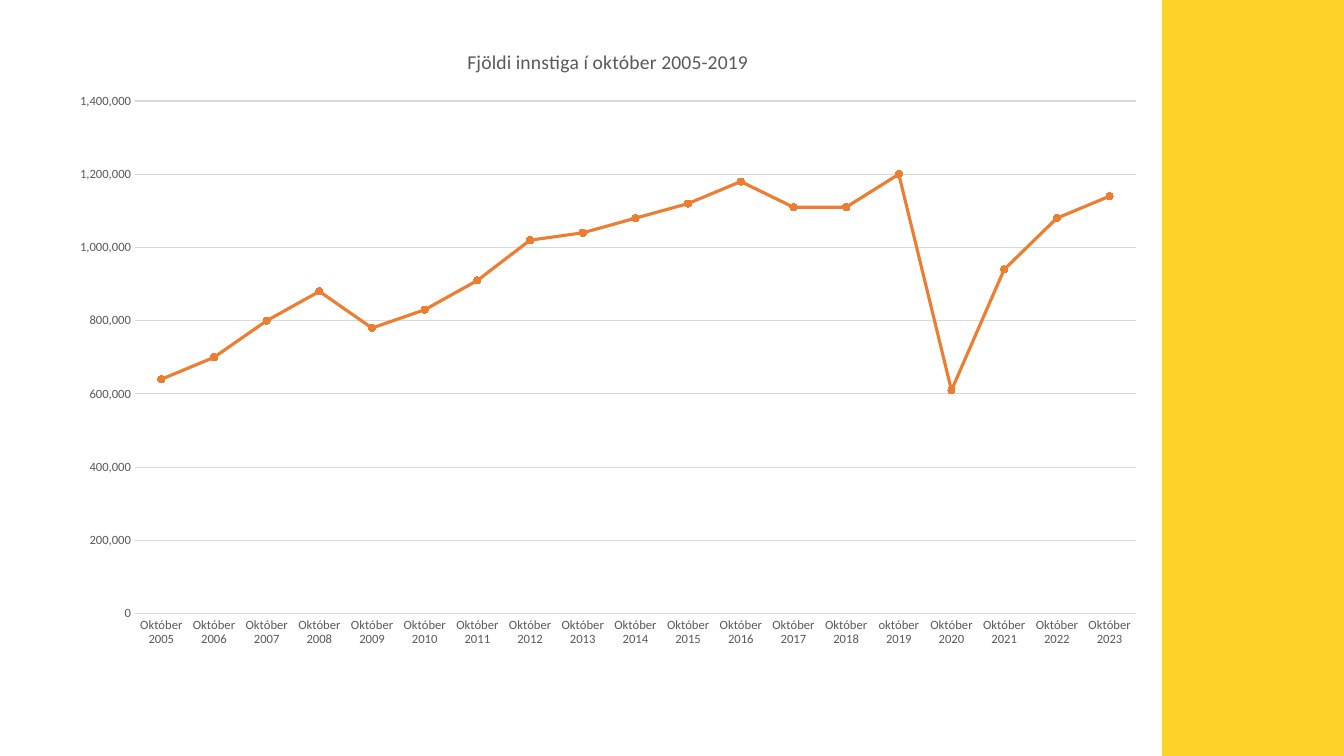
import pptx
import pptx.util
import pptx.chart.data
import pptx.dml.color
import pptx.enum.chart
import pptx.enum.shapes
import pptx.oxml

PX = 914400 / 100.8
COLORS = {"band": "FFD228", "series": "ED7D31", "text": "595959", "grid": "D9D9D9"}
FONT = "Calibri"
TITLE = "Fjöldi innstiga í október 2005-2019"
ENTRIES = {
    "Október 2005": 640000, "Október 2006": 700000, "Október 2007": 800000,
    "Október 2008": 880000, "Október 2009": 780000, "Október 2010": 830000,
    "Október 2011": 910000, "Október 2012": 1020000, "Október 2013": 1040000,
    "Október 2014": 1080000, "Október 2015": 1120000, "Október 2016": 1180000,
    "Október 2017": 1110000, "Október 2018": 1110000, "október 2019": 1200000,
    "Október 2020": 610000, "Október 2021": 940000, "Október 2022": 1080000,
    "Október 2023": 1140000,
}


def px(n):
    return pptx.util.Emu(round(n * PX))


def rgb(name):
    return pptx.dml.color.RGBColor.from_string(COLORS[name])


def set_attrs(obj, values):
    for name, value in values.items():
        setattr(obj, name, value)


def style_font(font, size):
    set_attrs(font, {"name": FONT, "size": pptx.util.Pt(size), "bold": False})
    font.color.rgb = rgb("text")


def style_line(line, color, width):
    line.color.rgb = rgb(color)
    line.width = pptx.util.Pt(width)


def side_band(s, x, y, w, h):
    band = s.shapes.add_shape(
        pptx.enum.shapes.MSO_SHAPE.RECTANGLE, px(x), px(y), px(w), px(h))
    band.shadow.inherit = False
    band.fill.solid()
    band.fill.fore_color.rgb = rgb("band")
    band.line.fill.background()


def place_plot(chart, x, y, w, h):
    plot_area = chart._chartSpace.chart.plotArea
    for old in plot_area.xpath("c:layout"):
        plot_area.remove(old)
    ns = "http://schemas.openxmlformats.org/drawingml/2006/chart"
    places = "".join(f'<c:{k} val="{v:.3f}"/>'
                     for k, v in zip("xywh", (x, y, w, h)))
    layout = pptx.oxml.parse_xml(
        f'<c:layout xmlns:c="{ns}"><c:manualLayout><c:layoutTarget val="inner"/>'
        f'<c:xMode val="edge"/><c:yMode val="edge"/>{places}'
        '</c:manualLayout></c:layout>')
    plot_area.insert(0, layout)


def boarding_chart(s, x, y, w, h):
    data = pptx.chart.data.CategoryChartData(number_format="#,##0")
    data.categories = list(ENTRIES)
    data.add_series("Series 1", list(ENTRIES.values()))
    chart = s.shapes.add_chart(
        pptx.enum.chart.XL_CHART_TYPE.LINE_MARKERS,
        px(x), px(y), px(w), px(h), data).chart
    set_attrs(chart, {"has_legend": False, "has_title": True})
    style_font(chart.font, 10)
    tf = chart.chart_title.text_frame
    tf.text = TITLE
    style_font(tf.paragraphs[0].runs[0].font, 14)
    chart.chart_title.include_in_layout = False
    place_plot(chart, 77 / w, 74 / h, 1001 / w, 513 / h)

    for axis in (chart.category_axis, chart.value_axis):
        set_attrs(axis, {"major_tick_mark": pptx.enum.chart.XL_TICK_MARK.NONE,
                         "minor_tick_mark": pptx.enum.chart.XL_TICK_MARK.NONE})
        style_font(axis.tick_labels.font, 9)
    style_line(chart.category_axis.format.line, "grid", 0.75)
    values = chart.value_axis
    set_attrs(values, {"minimum_scale": 0, "maximum_scale": 1400000,
                       "major_unit": 200000, "has_major_gridlines": True})
    values.format.line.fill.background()
    style_line(values.major_gridlines.format.line, "grid", 0.75)
    set_attrs(values.tick_labels,
              {"number_format": "#,##0", "number_format_is_linked": False})

    plot = chart.plots[0]
    plot.vary_by_categories = False
    series = plot.series[0]
    series.smooth = False
    style_line(series.format.line, "series", 2.25)
    marker = series.marker
    set_attrs(marker, {"style": pptx.enum.chart.XL_MARKER_STYLE.CIRCLE, "size": 5})
    marker.format.fill.solid()
    marker.format.fill.fore_color.rgb = rgb("series")
    style_line(marker.format.line, "series", 0.75)


def main():
    prs = pptx.Presentation()
    set_attrs(prs, {"slide_width": px(1344), "slide_height": px(756)})
    s = prs.slides.add_slide(prs.slide_layouts[6])
    side_band(s, 1162, 0, 182, 756)
    boarding_chart(s, 58, 27, 1100, 633)
    prs.save("out.pptx")


if __name__ == "__main__":
    main()
